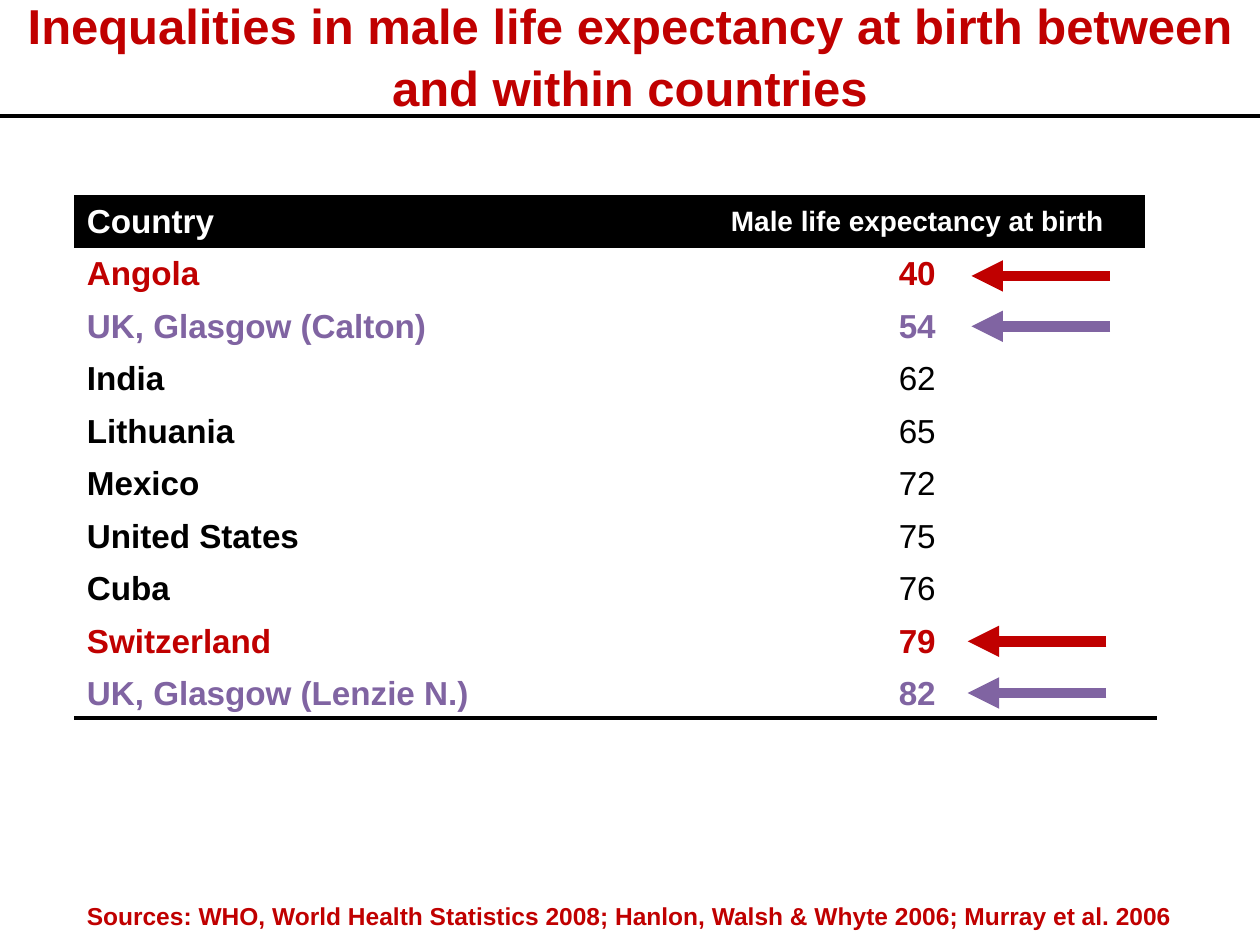
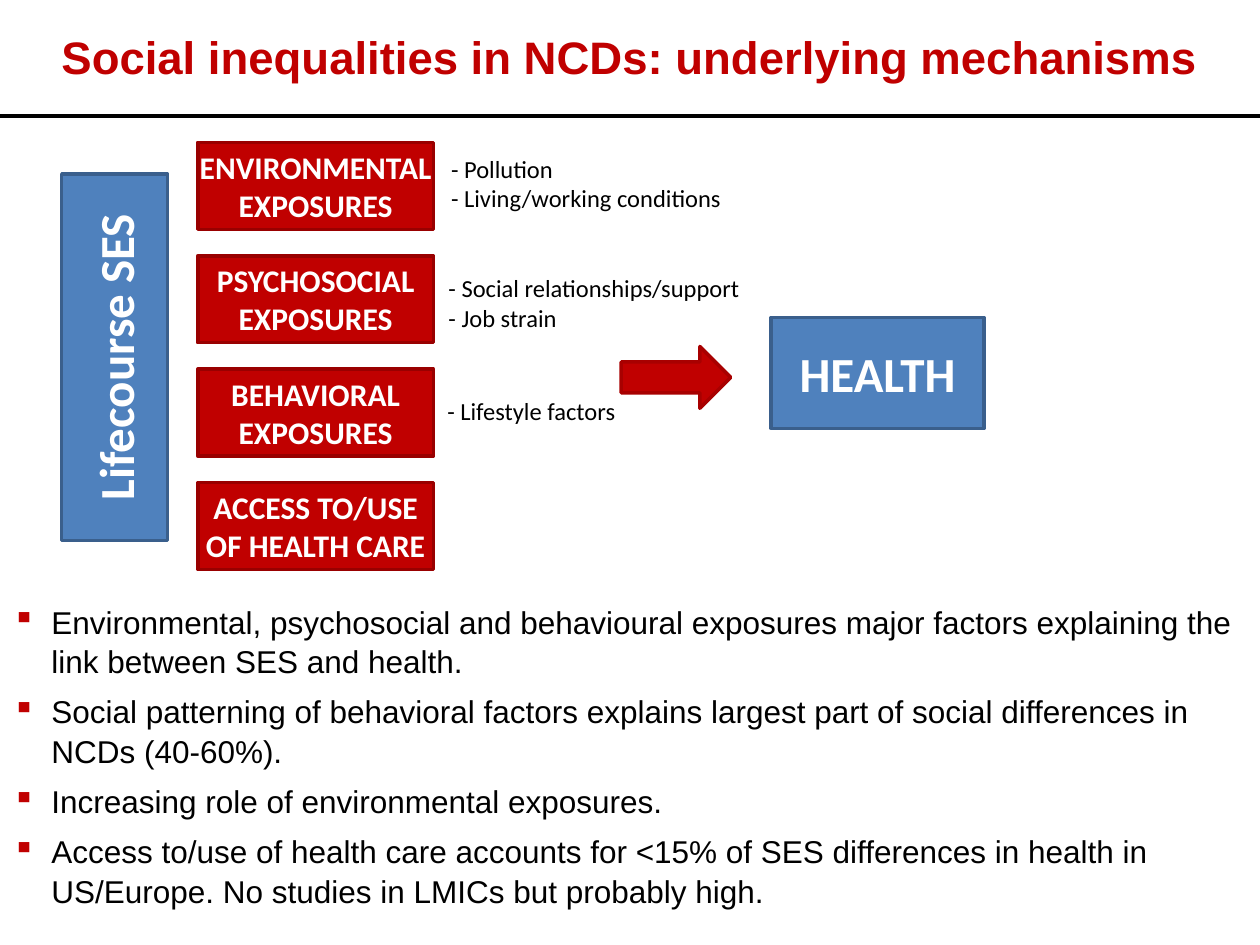
"""Build two slides on social inequalities in health."""
from lxml import etree
from pptx import Presentation
from pptx.dml.color import RGBColor
from pptx.enum.shapes import MSO_CONNECTOR, MSO_SHAPE
from pptx.enum.text import MSO_ANCHOR, PP_ALIGN
from pptx.oxml.ns import qn
from pptx.util import Inches, Pt

RED = RGBColor(0xC0, 0x00, 0x00)
DARK_RED = RGBColor(0x99, 0x00, 0x00)
ARROW_EDGE = RGBColor(0xA8, 0x00, 0x00)
PURPLE = RGBColor(0x80, 0x64, 0xA2)
BLUE = RGBColor(0x4F, 0x81, 0xBD)
DARK_BLUE = RGBColor(0x3A, 0x5F, 0x8C)
BLACK = RGBColor(0x00, 0x00, 0x00)
WHITE = RGBColor(0xFF, 0xFF, 0xFF)

LEFT, CENTER = PP_ALIGN.LEFT, PP_ALIGN.CENTER
TOP, MIDDLE = MSO_ANCHOR.TOP, MSO_ANCHOR.MIDDLE
STRAIGHT = MSO_CONNECTOR.STRAIGHT
RECT, RIGHT_ARROW = MSO_SHAPE.RECTANGLE, MSO_SHAPE.RIGHT_ARROW
NO_TABLE_STYLE = "{2D5ABB26-0587-4C30-8999-92F81FD0307C}"

COUNTRIES = [
    ("Angola", "40", RED),
    ("UK, Glasgow (Calton)", "54", PURPLE),
    ("India", "62", BLACK),
    ("Lithuania", "65", BLACK),
    ("Mexico", "72", BLACK),
    ("United States", "75", BLACK),
    ("Cuba", "76", BLACK),
    ("Switzerland", "79", RED),
    ("UK, Glasgow (Lenzie N.)", "82", PURPLE),
]
COUNTRY_ARROWS = [
    (8.81, 2.19, RED),
    (8.81, 2.59, PURPLE),
    (8.78, 5.09, RED),
    (8.78, 5.5, PURPLE),
]
EXPOSURES = [
    "ENVIRONMENTAL EXPOSURES",
    "PSYCHOSOCIAL EXPOSURES",
    "BEHAVIORAL EXPOSURES",
    "ACCESS TO/USE OF HEALTH CARE",
]
EXAMPLES = [
    (3.58, 1.22, ["- Pollution", "- Living/working conditions"]),
    (3.56, 2.17, ["- Social relationships/support", "- Job strain"]),
    (3.55, 3.14, ["- Lifestyle factors"]),
]
FINDINGS = [
    "Environmental, psychosocial and behavioural exposures major factors "
    "explaining the link between SES and health.",
    "Social patterning of behavioral factors explains largest part of social "
    "differences in NCDs (40-60%).",
    "Increasing role of environmental exposures.",
    "Access to/use of health care accounts for <15% of SES differences in "
    "health in US/Europe. No studies in LMICs but probably high.",
]


def write(tf, text, size=18, color=BLACK, bold=False, font="Arial",
          align=LEFT, before=None, spacing=None, bullet=None):
    """Fill a text frame with one line or a list of paragraphs."""
    lines = [text] if isinstance(text, str) else text
    for i, line in enumerate(lines):
        p = tf.add_paragraph() if i else tf.paragraphs[0]
        p.alignment = align
        if spacing:
            p.line_spacing = spacing
        if before:
            p.space_before = Pt(before)
        if bullet:
            add_bullet(p, bullet)
        r = p.add_run()
        r.text = line
        r.font.size = Pt(size)
        r.font.name = font
        r.font.bold = bold
        r.font.color.rgb = color


def add_bullet(p, char, color=RED, indent=0.31):
    """Give a paragraph a coloured bullet with a hanging indent."""
    pPr = p._p.get_or_add_pPr()
    pPr.set("marL", str(Inches(indent)))
    pPr.set("indent", str(-Inches(indent)))
    clr = etree.SubElement(pPr, qn("a:buClr"))
    etree.SubElement(clr, qn("a:srgbClr")).set("val", str(color))
    etree.SubElement(pPr, qn("a:buChar")).set("char", char)


class Deck:
    """Hold the presentation, its style and the current slide."""

    def __init__(self):
        """Start an empty 10 by 7.5 inch presentation."""
        self.prs = Presentation()
        self.prs.slide_width = Inches(10)
        self.prs.slide_height = Inches(7.5)
        self.s = None

    def slide(self, title, size):
        """Add a slide with its title and the rule below it."""
        self.s = self.prs.slides.add_slide(self.prs.slide_layouts[6])
        self.text(0, 0.01, 10, 0.85, title, anchor=MIDDLE, size=size,
                  color=RED, bold=True, align=CENTER, spacing=1.05)
        self.line(0, 10, 0.92)

    def frame(self, sp, anchor, insets):
        """Set wrapping, anchor and insets of a shape's text."""
        tf = sp.text_frame
        tf.word_wrap = True
        tf.vertical_anchor = anchor
        tf.margin_left, tf.margin_top, tf.margin_right, tf.margin_bottom = (
            Inches(v) for v in insets)
        return tf

    def text(self, x, y, w, h, text, anchor=TOP,
             insets=(0.1, 0.05, 0.1, 0.05), **fmt):
        """Add a text box."""
        sp = self.s.shapes.add_textbox(Inches(x), Inches(y), Inches(w), Inches(h))
        write(self.frame(sp, anchor, insets), text, **fmt)

    def shape(self, x, y, w, h, fill, edge, text=None, kind=RECT, vert=None,
              size=18):
        """Add an outlined shape with an optional bold white label."""
        sp = self.s.shapes.add_shape(kind, Inches(x), Inches(y), Inches(w), Inches(h))
        sp.shadow.inherit = False
        sp.fill.solid()
        sp.fill.fore_color.rgb = fill
        sp.line.color.rgb = edge
        sp.line.width = Pt(2)
        if text:
            tf = self.frame(sp, MIDDLE, (0, 0, 0, 0))
            write(tf, text, size=size, color=WHITE, bold=True,
                  font="Calibri", align=CENTER)
        if vert:
            sp.element.find(".//" + qn("a:bodyPr")).set("vert", vert)

    def line(self, x1, x2, y, color=BLACK, width=2.25, arrow=False):
        """Add a horizontal line, with an arrowhead at x2 if asked."""
        sp = self.s.shapes.add_connector(
            STRAIGHT, Inches(x1), Inches(y), Inches(x2), Inches(y))
        sp.line.color.rgb = color
        sp.line.width = Pt(width)
        spPr = sp.element.spPr
        if arrow:
            ln = spPr.find(qn("a:ln"))
            etree.SubElement(ln, qn("a:tailEnd")).set("type", "triangle")
        etree.SubElement(spPr, qn("a:effectLst"))

    def cell(self, cell, text, fill=WHITE, **fmt):
        """Fill one table cell."""
        cell.fill.solid()
        cell.fill.fore_color.rgb = fill
        cell.vertical_anchor = MIDDLE
        write(cell.text_frame, text, **fmt)

    def country_table(self, x, y, widths, height):
        """Add the table of life expectancy by country."""
        table = self.s.shapes.add_table(
            len(COUNTRIES) + 1, 2, Inches(x), Inches(y),
            Inches(sum(widths)), Inches(height)).table
        table._tbl.tblPr.find(qn("a:tableStyleId")).text = NO_TABLE_STYLE
        table.first_row = table.horz_banding = False
        for column, width in zip(table.columns, widths):
            column.width = Inches(width)
        head = dict(fill=BLACK, color=WHITE, bold=True)
        self.cell(table.cell(0, 0), "Country", size=19, **head)
        self.cell(table.cell(0, 1), "Male life expectancy at birth",
                  size=16, align=CENTER, **head)
        for row, (country, years, color) in enumerate(COUNTRIES, 1):
            self.cell(table.cell(row, 0), country, size=19, color=color, bold=True)
            self.cell(table.cell(row, 1), years, size=19, color=color,
                      bold=color != BLACK, align=CENTER)


def life_expectancy_slide(deck):
    """Build the table of male life expectancy."""
    deck.slide("Inequalities in male life expectancy at birth between "
               "and within countries", 28)
    deck.country_table(0.59, 1.55, (4.88, 3.62), 4.06)
    for x, y, color in COUNTRY_ARROWS:
        deck.line(x, x - 1.1, y, color, 6, arrow=True)
    deck.line(0.59, 9.18, 5.7)
    deck.text(0.59, 7.1, 9.02, 0.34,
              "Sources: WHO, World Health Statistics 2008; Hanlon, Walsh & "
              "Whyte 2006; Murray et al. 2006", size=14, color=RED, bold=True)


def mechanisms_slide(deck):
    """Build the diagram from lifecourse SES to health."""
    deck.slide("Social inequalities in NCDs: underlying mechanisms", 26)
    deck.text(0, 4.93, 10, 2.13, FINDINGS, anchor=MIDDLE,
              insets=(0.1, 0.05, 0, 0.05), before=6, spacing=1.05, bullet="▪")
    deck.shape(0.49, 1.38, 0.84, 2.91, BLUE, DARK_BLUE, "Lifecourse SES",
               vert="vert270", size=28)
    for i, exposure in enumerate(EXPOSURES):
        deck.shape(1.57, 1.13 + 0.9 * i, 1.87, 0.69, RED, DARK_RED, exposure)
    for x, y, lines in EXAMPLES:
        deck.text(x, y, 2.57, 0.24 * len(lines), lines, insets=(0, 0, 0, 0),
                  size=14, font="Calibri")
    deck.shape(6.12, 2.52, 1.69, 0.88, BLUE, DARK_BLUE, "HEALTH", size=28)
    deck.shape(4.93, 2.75, 0.87, 0.49, RED, ARROW_EDGE, kind=RIGHT_ARROW)


def main():
    """Build and save the presentation."""
    deck = Deck()
    life_expectancy_slide(deck)
    mechanisms_slide(deck)
    deck.prs.save("out.pptx")


if __name__ == "__main__":
    main()
